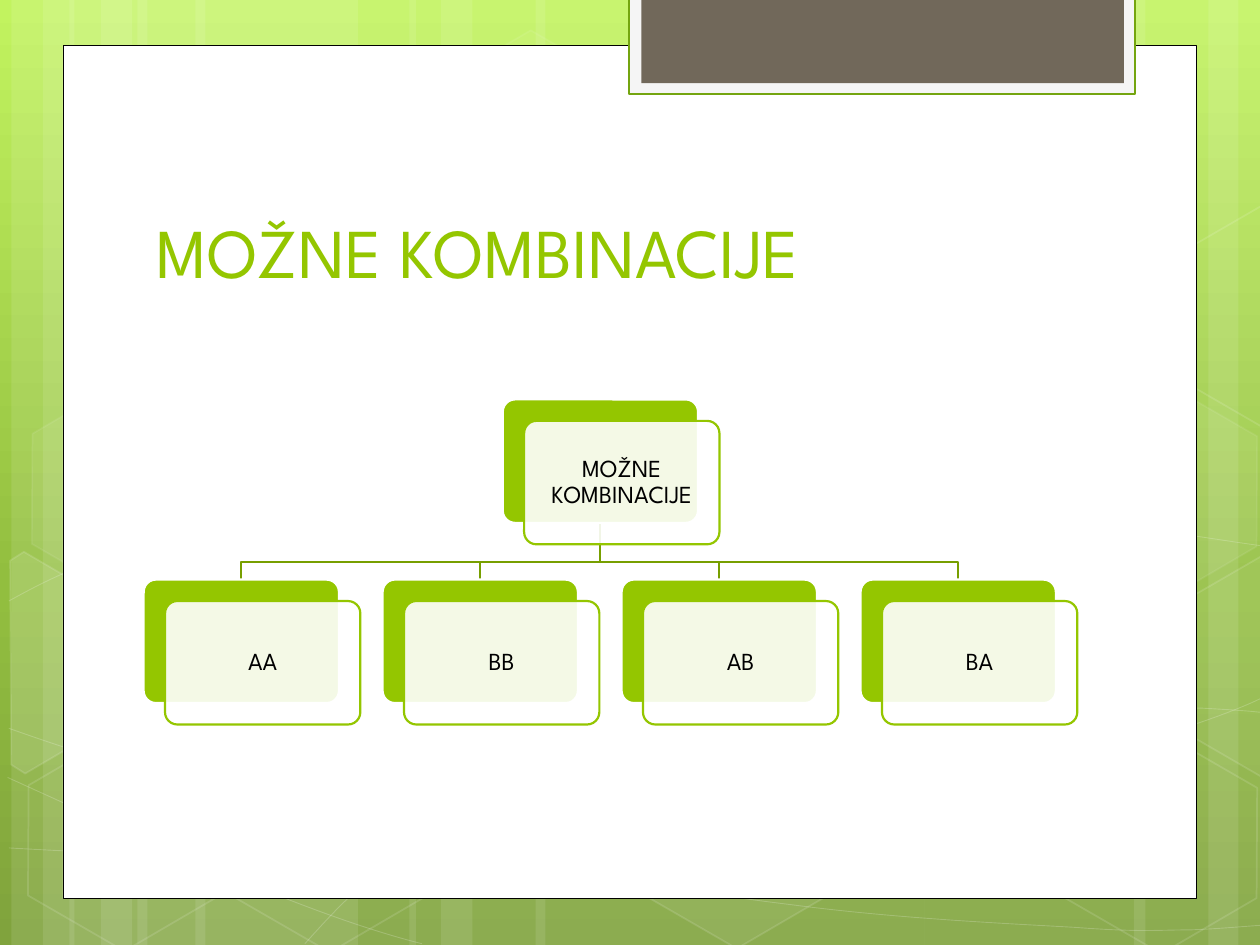
from copy import deepcopy
from dataclasses import dataclass
from typing import Optional

from lxml import etree
from pptx import Presentation, util as u
from pptx.dml import color as dml
from pptx.enum import shapes, text
from pptx.oxml import ns

COLORS = {
    "top": "C2F35F", "middle": "92BE3F", "bottom": "80A33D",
    "white": "FFFFFF", "black": "000000", "green": "94C600",
    "branch": "779F00", "tab_edge": "74A510", "tab_rim": "F5F5F5", "tab": "71685A",
}
FONT = "League Spartan"
Point = tuple[float, float]


@dataclass
class Paint:
    fill: Optional[str] = None
    fill_alpha: int = 100
    line: Optional[str] = None
    width: float = 1
    line_alpha: int = 100


@dataclass
class Hexagon:
    left: float
    top: float
    fill_alpha: int
    line_alpha: int


@dataclass
class Node:
    label: str
    left: float
    top: float


CARD_WIDTH, CARD_HEIGHT, CARD_SHIFT = 1.55, 0.98, 0.17
ROOT = Node("MOŽNE KOMBINACIJE", 3.99, 3.17)
CHILDREN = [Node(label, 1.14 + index * 5.69 / 3, 4.6)
            for index, label in enumerate(["AA", "BB", "AB", "BA"])]
STRIPES = [(1.09, 1.75), (0.09, 0.5), (0.34, 0.83), (1.55, 1.75), (0.55, 0.5),
           (0.8, 0.83), (7.34, 1.75), (9.59, 0.5), (9, 0.83), (4.25, 3.09),
           (3.25, 0.5), (3.5, 0.83)]
CURVES = [
    [(0.07, 6.73), (0.61, 6.76), (1.15, 6.79), (1.9, 6.78), (2.65, 6.77), (3.58, 6.75),
     (4.58, 6.65), (5.58, 6.55), (7, 6.36), (7.92, 6.17), (8.83, 5.98), (9.77, 5.68),
     (10.07, 5.51)],
    [(0.07, 4.77), (0.36, 4.61), (0.65, 4.46), (1.21, 4.31), (1.78, 4.16), (2.59, 3.94),
     (3.47, 3.87), (4.36, 3.8), (5.44, 3.79), (6.54, 3.87), (7.64, 3.95), (9.47, 4.26),
     (10.07, 4.34)],
    [(0.06, 6.17), (1.27, 6.72), (2.47, 7.27), (3.35, 7.49)],
    [(0.07, 5.78), (0.38, 5.89), (0.7, 6), (1.28, 6.16), (1.86, 6.31), (2.73, 6.56),
     (3.57, 6.73), (4.4, 6.9), (5.45, 7.08), (6.28, 7.18), (7.11, 7.29), (8, 7.33),
     (8.53, 7.36), (9.06, 7.4), (9.19, 7.38), (9.45, 7.38), (9.71, 7.37), (9.89, 7.35),
     (10.07, 7.34)],
    [(2.42, 7.49), (2.6, 7.29), (2.78, 7.09), (3.02, 6.91), (3.26, 6.72), (3.6, 6.53),
     (3.88, 6.39), (4.16, 6.25), (4.33, 6.19), (4.69, 6.09), (5.06, 5.99), (5.73, 5.85),
     (6.08, 5.78), (6.44, 5.71), (6.49, 5.71), (6.8, 5.69), (7.11, 5.66), (7.6, 5.63),
     (7.94, 5.62), (8.29, 5.61), (8.86, 5.62), (8.86, 5.62), (9.08, 5.62), (9.31, 5.62),
     (9.53, 5.62), (9.71, 5.63), (9.88, 5.64), (9.97, 5.65), (10.06, 5.66),
     (10.03, 5.65), (10.06, 5.66)],
]
HEXAGONS = [
    Hexagon(3.34, 0.36, 4, 8), Hexagon(4.97, 5.89, 6, 12), Hexagon(0.11, 5.91, 0, 12),
    Hexagon(0.14, 3.12, 7, 8), Hexagon(1.74, 5.92, 0, 12), Hexagon(7.53, 4.53, 10, 12),
    Hexagon(8.34, 5.93, 0, 12), Hexagon(8.34, 3.14, 7, 8),
]
CUT_HEXAGONS = [
    ([(0.08, 4.45), (0.19, 4.38), (0.96, 4.83), (0.95, 5.7), (0.2, 6.14), (0.09, 6.07)], 10),
    ([(9.26, 4.85), (10.02, 4.41), (10.09, 4.46), (10.09, 6.13), (10.02, 6.17), (9.26, 5.73)], 4),
    ([(9.26, 2.07), (10.02, 1.63), (10.1, 1.68), (10.09, 3.35), (10.02, 3.39), (9.26, 2.95)], 0),
]


def rgb(name: str) -> dml.RGBColor:
    return dml.RGBColor.from_string(COLORS[name])


def set_color(fill, name: Optional[str], alpha: int) -> None:
    if name is None or alpha == 0:
        fill.background()
        return
    fill.solid()
    fill.fore_color.rgb = rgb(name)


def set_alpha(parent, alpha: int) -> None:
    color = parent.find(ns.qn("a:solidFill") + "/" + ns.qn("a:srgbClr"))
    if color is not None and alpha < 100:
        etree.SubElement(color, ns.qn("a:alpha")).set("val", str(alpha * 1000))


def apply_paint(shape, paint: Paint) -> None:
    shape.shadow.inherit = False
    set_color(shape.fill, paint.fill, paint.fill_alpha)
    set_color(shape.line.fill, paint.line, paint.line_alpha)
    properties = shape.element.spPr
    set_alpha(properties, paint.fill_alpha)
    if paint.line:
        shape.line.width = u.Pt(paint.width)
        set_alpha(properties.find(ns.qn("a:ln")), paint.line_alpha)


def add_preset(page, kind, left: float, top: float, width: float, height: float, paint: Paint):
    shape = page.shapes.add_shape(
        kind, u.Inches(left), u.Inches(top), u.Inches(width), u.Inches(height))
    apply_paint(shape, paint)
    return shape


def add_outline(page, points: list[Point], paint: Paint, close: bool = False):
    places = [(u.Inches(x), u.Inches(y)) for x, y in points]
    builder = page.shapes.build_freeform(*places[0])
    builder.add_line_segments(places[1:], close=close)
    shape = builder.convert_to_shape()
    apply_paint(shape, paint)
    return shape


def add_curve(page, controls: list[Point], paint: Paint) -> None:
    shape = add_outline(page, controls, paint)
    segments = shape.element.findall(".//" + ns.qn("a:lnTo"))
    outline = segments[0].getparent()
    for start in range(0, len(segments), 3):
        bezier = etree.SubElement(outline, ns.qn("a:cubicBezTo"))
        for segment in segments[start:start + 3]:
            bezier.append(segment[0])
            outline.remove(segment)


def format_span(span, size: float, color: str) -> None:
    span.font.name, span.font.size = FONT, u.Pt(size)
    span.font.color.rgb = rgb(color)


def paint_background(page) -> None:
    fill = page.background.fill
    fill.gradient()
    fill.gradient_angle = 270
    stop_list = page.element.find(".//" + ns.qn("a:gsLst"))
    stop_list.append(deepcopy(stop_list[-1]))
    for stop, name, position in zip(fill.gradient_stops, ("top", "middle", "bottom"), (0, 0.62, 1)):
        stop.color.rgb, stop.position = rgb(name), position


def draw_backdrop(page) -> None:
    rectangle = shapes.MSO_SHAPE.RECTANGLE
    for left, width in STRIPES:
        add_preset(page, rectangle, left, 0, width, 7.5, Paint("white", 10))
    for controls in CURVES:
        add_curve(page, controls, Paint(line="white", width=0.5, line_alpha=20))
    for item in HEXAGONS:
        hexagon = add_preset(page, shapes.MSO_SHAPE.HEXAGON, item.left, item.top, 1.75, 1.52,
                             Paint("white", item.fill_alpha, "white", 1, item.line_alpha))
        hexagon.adjustments[0] = 0.285
        hexagon.rotation = 30
    for points, alpha in CUT_HEXAGONS:
        add_outline(page, points, Paint("white", alpha, "white", 1, 12), close=True)
    add_preset(page, rectangle, 0.5, 0.36, 9, 6.77, Paint("white", line="black", width=0.5))
    add_preset(page, rectangle, 4.99, -0.02, 4.02, 0.77,
               Paint("tab_rim", line="tab_edge", width=1.25))
    add_preset(page, rectangle, 5.09, -0.02, 3.83, 0.68, Paint("tab"))


def draw_title(page) -> None:
    title = page.shapes.title
    page.shapes.element.append(title.element)
    title.left, title.top = u.Inches(1.14), u.Inches(1.12)
    title.width, title.height = u.Inches(7.68), u.Inches(1.25)
    frame = title.text_frame
    frame.text = "MOŽNE KOMBINACIJE"
    frame.vertical_anchor = text.MSO_ANCHOR.BOTTOM
    frame.paragraphs[0].alignment = text.PP_ALIGN.LEFT
    format_span(frame.paragraphs[0].runs[0], 40, "green")


def draw_branch(page, parent: Node, child: Node) -> None:
    start, end = parent.left + CARD_WIDTH / 2, child.left + CARD_WIDTH / 2
    bend = child.top - 0.14
    add_outline(page, [(start, parent.top + CARD_HEIGHT), (start, bend), (end, bend),
                       (end, child.top)], Paint(line="branch", width=1.25))


def draw_node(page, node: Node) -> None:
    for shift, paint in ((0, Paint("green", line="white", width=1.25)),
                         (CARD_SHIFT, Paint("white", 90, "green", 1.25))):
        card = add_preset(page, shapes.MSO_SHAPE.ROUNDED_RECTANGLE, node.left + shift,
                          node.top + shift, CARD_WIDTH, CARD_HEIGHT, paint)
        card.adjustments[0] = 0.1
    frame = card.text_frame
    frame.text, frame.word_wrap = node.label, True
    frame.vertical_anchor = text.MSO_ANCHOR.MIDDLE
    frame.margin_left = frame.margin_right = frame.margin_top = frame.margin_bottom = u.Inches(0.06)
    para = frame.paragraphs[0]
    para.alignment, para.line_spacing, para.space_after = text.PP_ALIGN.CENTER, 0.9, u.Pt(5)
    format_span(para.runs[0], 14, "black")


def main() -> None:
    deck = Presentation()
    deck.slide_width, deck.slide_height = u.Inches(10), u.Inches(7.5)
    page = deck.slides.add_slide(deck.slide_layouts[5])
    paint_background(page)
    draw_backdrop(page)
    draw_title(page)
    for child in CHILDREN:
        draw_branch(page, ROOT, child)
    for node in [ROOT, *CHILDREN]:
        draw_node(page, node)
    deck.save("out.pptx")


if __name__ == "__main__":
    main()
